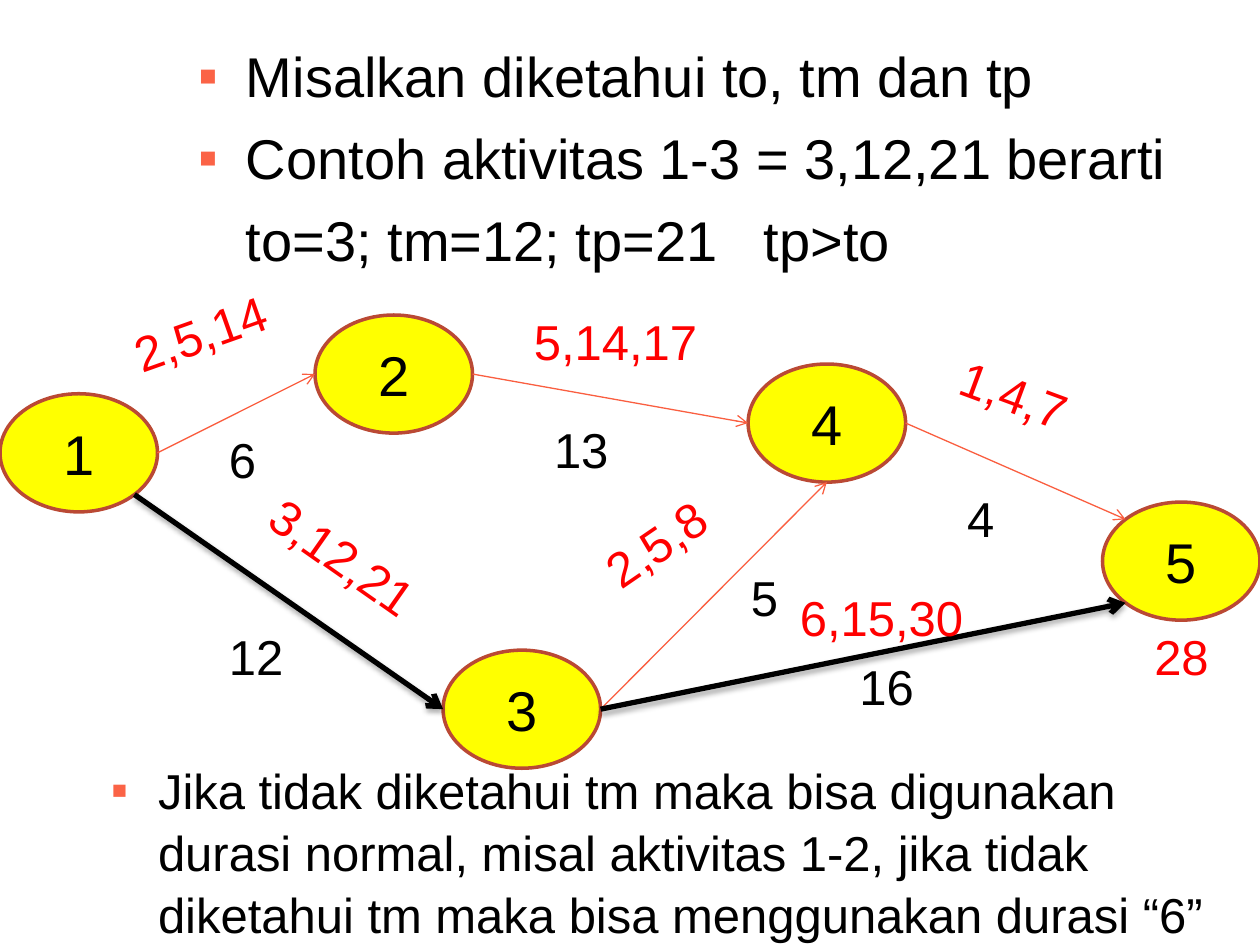
from math import cos, sin, radians
from lxml import etree
from pptx import Presentation
from pptx import util as u
from pptx.dml.color import RGBColor
from pptx.enum import shapes, text
from pptx.oxml.ns import qn

Pt = u.Pt
COLORS = {"text": "000000", "estimate": "FF0000", "node": "FFFF00",
          "outline": "BA4934", "arrow": "FA5E40", "bullet": "FB6346"}
NODE_W, NODE_H = 90, 67.5
INDENT = 27


def rgb(name):
    return RGBColor.from_string(COLORS[name])


def add_run(p, words, size, color="text"):
    r = p.add_run()
    r.text = words
    r.font.name, r.font.size = "Arial", Pt(size)
    r.font.color.rgb = rgb(color)


prs = Presentation()
prs.slide_width, prs.slide_height = Pt(720), Pt(540)
s = prs.slides.add_slide(prs.slide_layouts[6])

# Explanations above and below the network: (box, size, [(words, bulleted)])
notes = [
    ((106.5, 16.5, 579, 140.5), 32,
     [("Misalkan diketahui to, tm dan tp", True),
      ("Contoh aktivitas 1-3 = 3,12,21 berarti", True),
      ("to=3; tm=12; tp=21   tp>to", False)]),
    ((56.25, 427.5, 663.75, 112.5), 28,
     [("Jika tidak diketahui tm maka bisa digunakan durasi normal, "
       "misal aktivitas 1-2, jika tidak diketahui tm maka bisa "
       "menggunakan durasi “6”", True)]),
]

# Nodes: number -> left, top
nodes = {1: (0, 225), 2: (180, 180), 3: (253.2, 371.5),
         4: (427.5, 208), 5: (630, 286.9)}

# Activities: from node, angle on its rim, to node, angle, critical
activities = [(1, 45, 3, 180, True), (1, 0, 2, 180, False),
              (2, 0, 4, 180, False), (3, 0, 4, 90, False),
              (4, 0, 5, 225, False), (3, 0, 5, 135, True)]

# Labels: words, left, top, width, rotation, colour
labels = [
    ("6", 123.75, 242, 39.5, 0, "text"),
    ("12", 123.75, 354.5, 67.5, 0, "text"),
    ("13", 309.5, 236, 67.5, 0, "text"),
    ("4", 545.5, 275.75, 67.5, 0, "text"),
    ("16", 484, 371.5, 67.5, 0, "text"),
    ("5", 422, 320.5, 67.5, 0, "text"),
    ("28", 652.5, 354.5, 67.5, 0, "estimate"),
    ("3,12,21", 140.5, 304, 129.5, 35.1, "estimate"),
    ("6,15,30", 450, 332, 129.5, 0, "estimate"),
    ("5,14,17", 298, 174.25, 129.5, 0, "estimate"),
    ("2,5,14", 67.5, 163.5, 129.5, 340.5, "estimate"),
    ("2,5,8", 332, 275, 129.5, 325.6, "estimate"),
    ("1,4,7", 540, 214, 129.5, 20.3, "estimate"),
]

for number, (left, top) in nodes.items():
    sp = s.shapes.add_shape(shapes.MSO_SHAPE.OVAL, Pt(left), Pt(top),
                            Pt(NODE_W), Pt(NODE_H))
    sp.shadow.inherit = False
    sp.fill.solid()
    sp.fill.fore_color.rgb = rgb("node")
    sp.line.color.rgb = rgb("outline")
    sp.line.width = Pt(2)
    tf = sp.text_frame
    tf.vertical_anchor = text.MSO_ANCHOR.MIDDLE
    p = tf.paragraphs[0]
    p.alignment = text.PP_ALIGN.CENTER
    add_run(p, str(number), 32)

for start, start_angle, end, end_angle, critical in activities:
    ends = []
    for node, angle in ((start, start_angle), (end, end_angle)):
        left, top = nodes[node]
        ends += [Pt(left + NODE_W / 2 * (1 + cos(radians(angle)))),
                 Pt(top + NODE_H / 2 * (1 + sin(radians(angle))))]
    c = s.shapes.add_connector(shapes.MSO_CONNECTOR.STRAIGHT, *ends)
    c.line.color.rgb = rgb("text" if critical else "arrow")
    c.line.width = Pt(3 if critical else 0.75)
    etree.SubElement(c.line._get_or_add_ln(), qn("a:tailEnd"), type="arrow")
    effects = etree.SubElement(c._element.spPr, qn("a:effectLst"))
    if critical:
        shadow = etree.SubElement(
            effects, qn("a:outerShdw"), blurRad=str(Pt(3.1)),
            dist=str(Pt(1.8)), dir="5400000", rotWithShape="0")
        black = etree.SubElement(shadow, qn("a:srgbClr"), val=COLORS["text"])
        etree.SubElement(black, qn("a:alpha"), val="35000")

for words, left, top, width, rotation, color in labels:
    sp = s.shapes.add_textbox(Pt(left), Pt(top), Pt(width), Pt(41))
    sp.rotation = rotation
    tf = sp.text_frame
    tf.word_wrap = True
    add_run(tf.paragraphs[0], words, 28, color)

for box, size, lines in notes:
    sp = s.shapes.add_textbox(*[Pt(v) for v in box])
    tf = sp.text_frame
    tf.word_wrap = True
    tf.margin_top = Pt(5.5)
    for i, (words, bulleted) in enumerate(lines):
        p = tf.add_paragraph() if i else tf.paragraphs[0]
        p.line_spacing = 1.05
        if i:
            p.space_before = Pt(size * 0.2)
        pPr = p._p.get_or_add_pPr()
        pPr.set("marL", str(Pt(INDENT)))
        pPr.set("indent", str(Pt(-INDENT if bulleted else 0)))
        if bulleted:
            color = etree.SubElement(pPr, qn("a:buClr"))
            etree.SubElement(color, qn("a:srgbClr"), val=COLORS["bullet"])
            etree.SubElement(pPr, qn("a:buFont"), typeface="Arial")
            etree.SubElement(pPr, qn("a:buChar"), char="▪")
        add_run(p, words, size)

prs.save("out.pptx")
